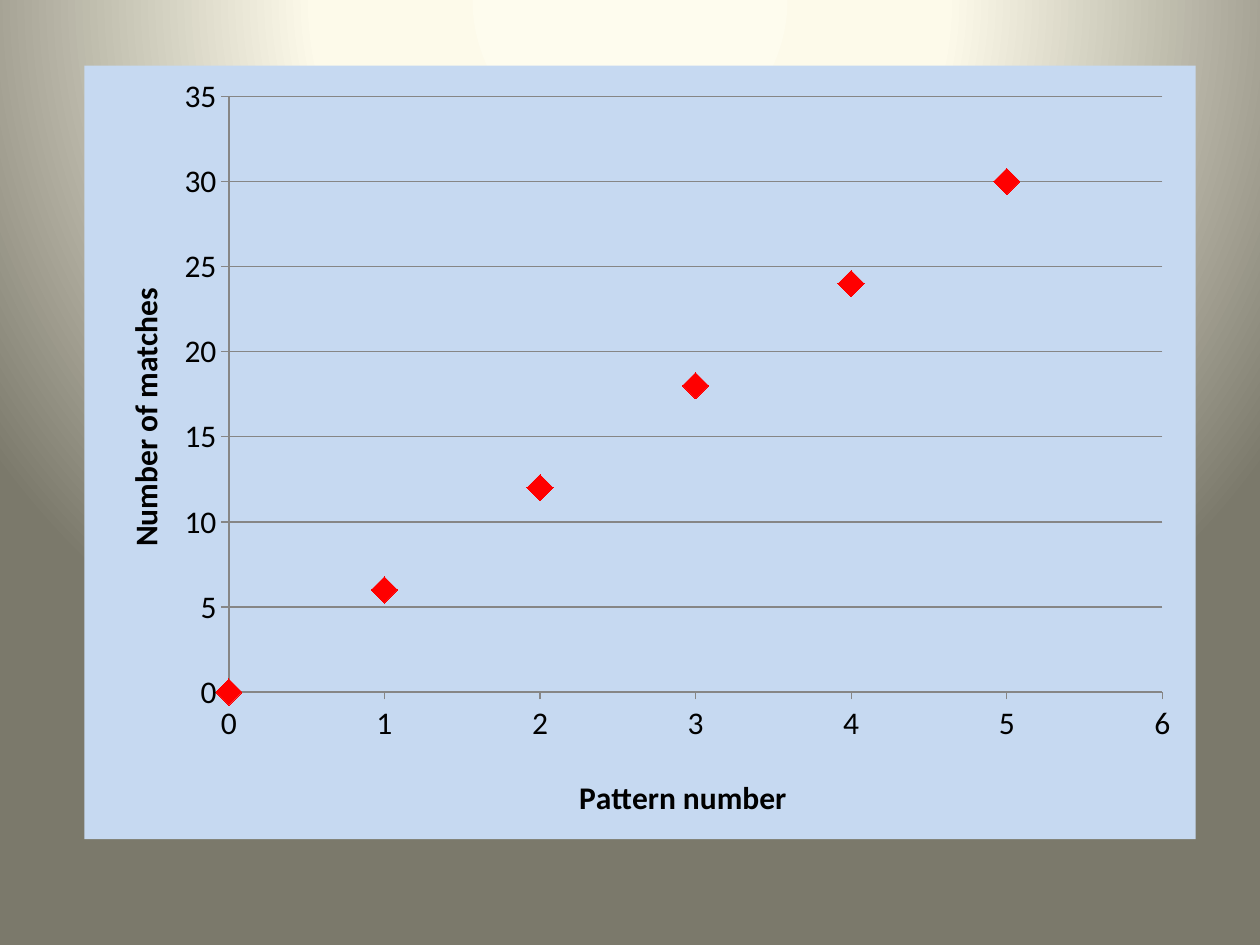
from pptx import Presentation
from pptx.chart.data import XyChartData
from pptx.dml.color import RGBColor
from pptx.enum.chart import XL_CHART_TYPE as ChartType
from pptx.enum.chart import XL_MARKER_STYLE as MarkerStyle
from pptx.enum.chart import XL_TICK_MARK as TickMark
from pptx.oxml import parse_xml
from pptx.oxml.ns import nsdecls
from pptx.util import Inches, Pt

COLORS = {
    "text": "000000",
    "grid": "868686",
    "panel": "C6D9F1",
    "marker": "FF0000",
}
BACKGROUND_STOPS = [(0, "FEFCEE"), (40, "FDFAEA"), (100, "7B796B")]
MATCHES_PER_PATTERN = 6


def color(name):
    return RGBColor.from_string(COLORS[name])


def format_font(font, size=18, bold=False):
    font.name = "Calibri"
    font.size = Pt(size)
    font.bold = bold
    font.color.rgb = color("text")


def write_text(text_frame, text, **font_format):
    text_frame.text = text
    format_font(text_frame.paragraphs[0].runs[0].font, **font_format)


def set_background(slide):
    """Fill the slide with a circular gradient centred above its top edge."""
    stops = "".join(
        f'<a:gs pos="{percent * 1000}"><a:srgbClr val="{value}"/></a:gs>'
        for percent, value in BACKGROUND_STOPS
    )
    background = parse_xml(
        f'<p:bg {nsdecls("p", "a")}><p:bgPr><a:gradFill rotWithShape="1">'
        f'<a:gsLst>{stops}</a:gsLst><a:path path="circle">'
        '<a:fillToRect l="50000" t="-80000" r="50000" b="180000"/></a:path>'
        "</a:gradFill><a:effectLst/></p:bgPr></p:bg>"
    )
    slide.element.cSld.insert(0, background)


def place(element, index, **fractions):
    """Give a chart part a manual layout, in fractions of the chart area."""
    for layout in element.xpath("c:layout"):
        element.remove(layout)
    target = '<c:layoutTarget val="inner"/>' if "w" in fractions else ""
    modes = '<c:xMode val="edge"/><c:yMode val="edge"/>'
    values = "".join(f'<c:{key} val="{value}"/>' for key, value in fractions.items())
    element.insert(index, parse_xml(
        f'<c:layout {nsdecls("c")}><c:manualLayout>{target}{modes}{values}'
        "</c:manualLayout></c:layout>"
    ))


def fill_chart_area(chart):
    chart.element.xpath("c:chart")[0].addnext(parse_xml(
        f'<c:spPr {nsdecls("c", "a")}><a:solidFill>'
        f'<a:srgbClr val="{COLORS["panel"]}"/></a:solidFill>'
        "<a:ln><a:noFill/></a:ln></c:spPr>"
    ))


def format_line(line):
    line.color.rgb = color("grid")
    line.width = Pt(0.75)


def format_axis(axis, title, maximum, step, x, y, gridlines=False):
    axis.minimum_scale, axis.maximum_scale = 0, maximum
    axis.major_unit = step
    axis.major_tick_mark = TickMark.OUTSIDE
    axis.minor_tick_mark = TickMark.NONE
    axis.has_major_gridlines = gridlines
    if gridlines:
        format_line(axis.major_gridlines.format.line)
    format_line(axis.format.line)
    format_font(axis.tick_labels.font)
    write_text(axis.axis_title.text_frame, title, bold=True)
    place(axis.axis_title.element, 1, x=x, y=y)


def format_markers(series):
    series.format.line.fill.background()
    marker = series.marker
    marker.style = MarkerStyle.DIAMOND
    marker.size = 15
    marker.format.fill.solid()
    marker.format.fill.fore_color.rgb = color("marker")
    marker.format.line.color.rgb = color("marker")


def add_matches_chart(slide):
    data = XyChartData()
    matches = data.add_series("Series 1")
    for pattern in range(6):
        matches.add_data_point(pattern, pattern * MATCHES_PER_PATTERN)
    chart = slide.shapes.add_chart(
        ChartType.XY_SCATTER,
        Inches(0.67), Inches(0.52), Inches(8.82), Inches(6.14), data,
    ).chart
    chart.has_legend = False
    chart.has_title = False
    format_font(chart.font)
    fill_chart_area(chart)
    chart.plots[0].vary_by_categories = False
    format_markers(chart.plots[0].series[0])
    format_axis(chart.category_axis, "Pattern number", 6, 1, x=0.44, y=0.91)
    format_axis(chart.value_axis, "Number of matches", 35, 5,
                x=0.03, y=0.28, gridlines=True)
    place(chart.element.xpath("c:chart/c:plotArea")[0], 0,
          x=0.13, y=0.04, w=0.84, h=0.77)


def main():
    presentation = Presentation()
    presentation.slide_width = Inches(10)
    presentation.slide_height = Inches(7.5)
    slide = presentation.slides.add_slide(presentation.slide_layouts[6])
    set_background(slide)
    add_matches_chart(slide)
    presentation.save("out.pptx")


if __name__ == "__main__":
    main()
